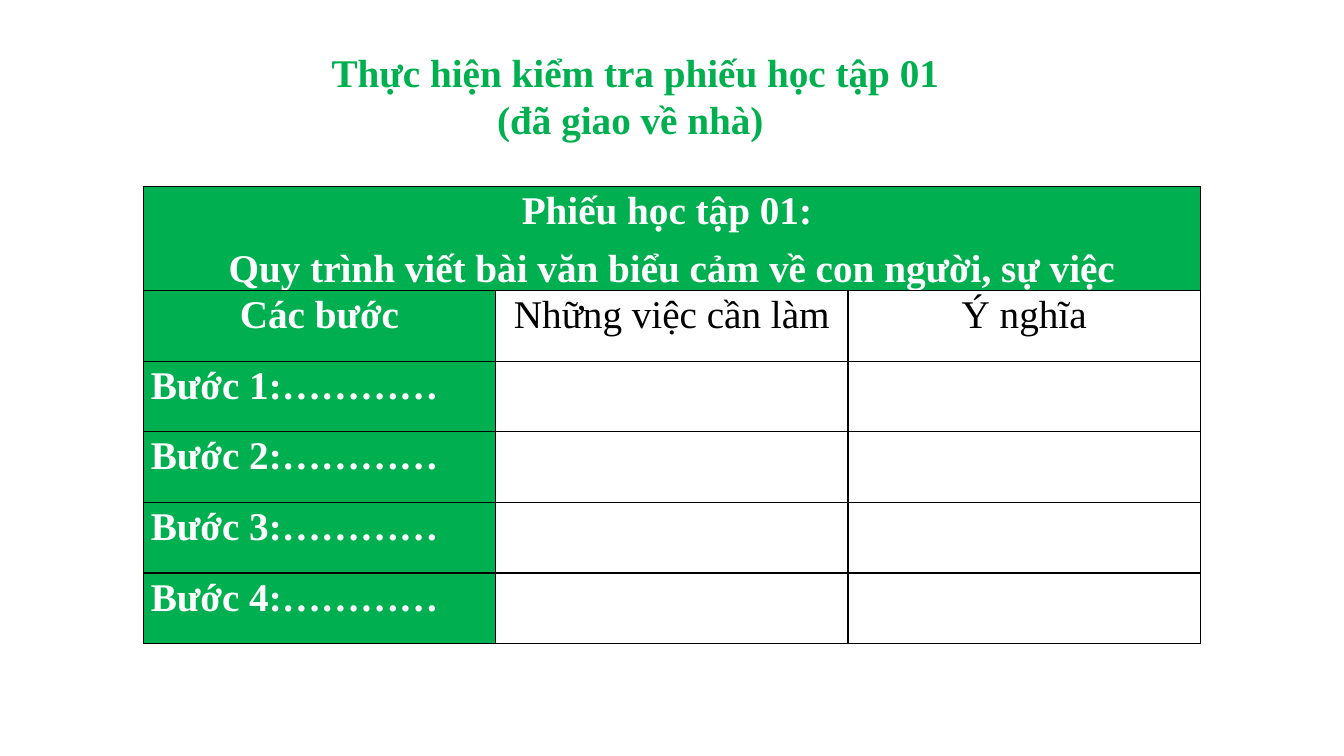
from lxml.etree import SubElement
from pptx import Presentation
from pptx.dml.color import RGBColor
from pptx.enum.text import MSO_AUTO_SIZE as AutoSize, PP_ALIGN as Align
from pptx.oxml.ns import qn
from pptx.util import Cm, Pt

GREEN = RGBColor(0x00, 0xB0, 0x50)
WHITE = RGBColor(0xFF, 0xFF, 0xFF)
BLACK = RGBColor(0x00, 0x00, 0x00)


def write(tf, *lines, color=BLACK, bold=False, align=Align.CENTER, spacing=None, after=None):
    for i, line in enumerate(lines):
        p = tf.add_paragraph() if i else tf.paragraphs[0]
        p.alignment = align
        p.line_spacing = spacing
        p.space_after = after
        r = p.add_run()
        r.text = line
        r.font.name = "Times New Roman"
        r.font.size = Pt(28)
        r.font.bold = bold
        r.font.color.rgb = color


def add_borders(cell):
    tc_pr = cell._tc.get_or_add_tcPr()
    for side in ("a:lnL", "a:lnR", "a:lnT", "a:lnB"):
        ln = SubElement(tc_pr, qn(side), w=str(Pt(1)))
        fill = SubElement(ln, qn("a:solidFill"))
        SubElement(fill, qn("a:srgbClr"), val=str(BLACK))


prs = Presentation()
prs.slide_width, prs.slide_height = Cm(33.87), Cm(19.05)
s = prs.slides.add_slide(prs.slide_layouts[6])

# Worksheet table
rows = [
    [("Phiếu học tập 01: ", "Quy trình viết bài văn biểu cảm về con người, sự việc")],
    [("Các bước",), ("Những việc cần làm",), ("Ý nghĩa",)],
]
rows += [[(f"Bước {n}:…………",)] for n in range(1, 5)]

frame = s.shapes.add_table(len(rows), 3, Cm(3.61), Cm(4.7), Cm(26.64), Cm(11.6))
table = frame.table
table.first_row = table.horz_banding = False
for column in table.columns:
    column.width = Cm(8.88)
for row in table.rows:
    row.height = Cm(1.78)
table.rows[0].height = Cm(2.62)
table.cell(0, 0).merge(table.cell(0, 2))

for i, texts in enumerate(rows):
    for j in range(3):
        cell = table.cell(i, j)
        add_borders(cell)
        is_green = i == 0 or j == 0
        if is_green:
            cell.fill.solid()
            cell.fill.fore_color.rgb = GREEN
        else:
            cell.fill.background()
        if j < len(texts):
            cell.margin_left = cell.margin_right = Cm(0.19)
            cell.margin_top = cell.margin_bottom = 0
            write(cell.text_frame, *texts[j], color=WHITE if is_green else BLACK,
                  bold=is_green, align=Align.CENTER if i < 2 else Align.LEFT,
                  spacing=1.07, after=Pt(8))

# Title
title = s.shapes.add_textbox(Cm(7.54), Cm(1.09), Cm(16.94), Cm(2.64))
tf = title.text_frame
tf.word_wrap = True
tf.auto_size = AutoSize.SHAPE_TO_FIT_TEXT
write(tf, "Thực hiện kiểm tra phiếu học tập 01 (đã giao về nhà) ", color=GREEN, bold=True)

prs.save("out.pptx")
